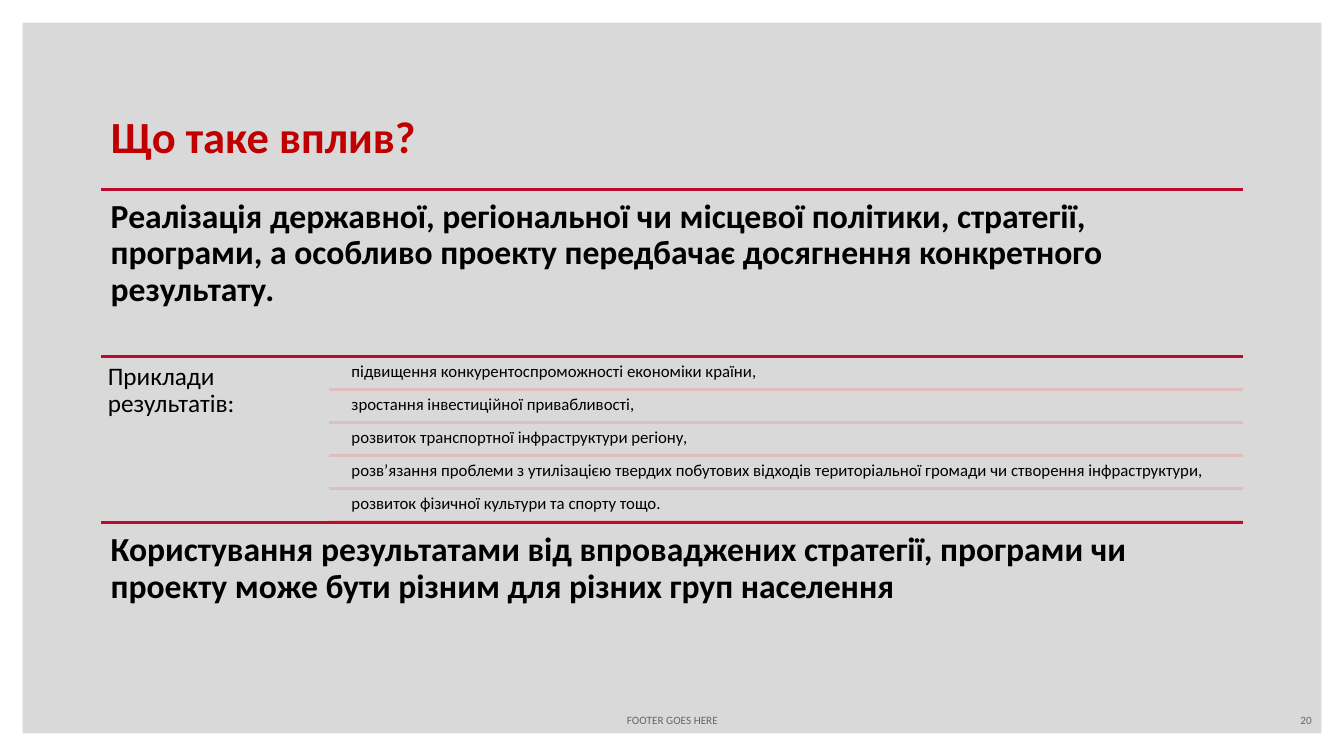
from dataclasses import dataclass

from lxml import etree
from pptx import Presentation
from pptx.dml.color import RGBColor
from pptx.enum.shapes import MSO_CONNECTOR, MSO_SHAPE
from pptx.enum.text import MSO_ANCHOR, MSO_AUTO_SIZE, PP_ALIGN
from pptx.oxml.ns import qn
from pptx.util import Inches, Pt

LEFT, CENTER, RIGHT = PP_ALIGN.LEFT, PP_ALIGN.CENTER, PP_ALIGN.RIGHT
TOP, MIDDLE, BOTTOM = MSO_ANCHOR.TOP, MSO_ANCHOR.MIDDLE, MSO_ANCHOR.BOTTOM

# Content
TITLE = "Що таке вплив?"
INTRO = ("Реалізація державної, регіональної чи місцевої політики, стратегії, "
         "програми, а особливо проекту передбачає досягнення конкретного результату.")
EXAMPLES_LABEL = "Приклади результатів:"
EXAMPLES = [
    "підвищення конкурентоспроможності економіки країни,",
    "зростання інвестиційної привабливості,",
    "розвиток транспортної інфраструктури регіону,",
    "розв’язання проблеми з утилізацією твердих побутових відходів "
    "територіальної громади чи створення інфраструктури,",
    "розвиток фізичної культури та спорту тощо.",
]
CONCLUSION = ("Користування результатами від впроваджених стратегії, програми чи "
              "проекту може бути різним для різних груп населення")
FOOTER = "FOOTER GOES HERE"
PAGE = "20"


@dataclass(frozen=True)
class Theme:
    font: str = "Calibri"
    background: str = "D9D9D9"
    frame: str = "FFFFFF"
    title: str = "C00000"
    text: str = "000000"
    muted: str = "6C6463"
    rule: str = "BA0C2F"
    soft_rule: str = "E0BDBE"
    title_size: float = 31.8
    statement_size: float = 24
    label_size: float = 18
    example_size: float = 12
    footer_size: float = 8
    rule_width: float = 2


THEME = Theme()

# Grid, in inches
SLIDE_W, SLIDE_H = 13.33, 7.5
MARGIN = 1
BODY_W = SLIDE_W - 2 * MARGIN
BODY_RIGHT = MARGIN + BODY_W
BODY_TOP, BODY_BOTTOM = 1.88, 6.84
TIER_H = (BODY_BOTTOM - BODY_TOP) / 3
intro_top, examples_top, conclusion_top = (BODY_TOP + i * TIER_H for i in range(3))
LABEL_W = BODY_W / 5
EXAMPLE_INDENT = 0.17
GAP_SHARE = 0.05  # gap between examples, as a share of an example's height
count = len(EXAMPLES)
EXAMPLE_H = TIER_H / (count + (count + 1) * GAP_SHARE)
EXAMPLE_GAP = EXAMPLE_H * GAP_SHARE
FOOTER_TOP, FOOTER_H = 7.03, 0.23

prs = Presentation()
prs.slide_width, prs.slide_height = Inches(SLIDE_W), Inches(SLIDE_H)
slide = prs.slides.add_slide(prs.slide_layouts[5])


def put_text(text, *, at, size, color=THEME.text, bold=False, align=LEFT,
             anchor=TOP, inset=(0.1, 0.05), spacing=None, after=0, box=None):
    left, top, width, height = map(Inches, at)
    if box is None:
        box = slide.shapes.add_textbox(left, top, width, height)
    box.left, box.top, box.width, box.height = left, top, width, height
    frame = box.text_frame
    frame.word_wrap = True
    frame.auto_size = MSO_AUTO_SIZE.NONE
    frame.vertical_anchor = anchor
    frame.margin_left = frame.margin_right = Inches(inset[0])
    frame.margin_top = frame.margin_bottom = Inches(inset[1])
    frame.text = text
    paragraph = frame.paragraphs[0]
    paragraph.alignment = align
    paragraph.space_after = Pt(after)
    if spacing:
        paragraph.line_spacing = spacing
    font = paragraph.runs[0].font
    font.name, font.size, font.bold = THEME.font, Pt(size), bold
    font.color.rgb = RGBColor.from_string(color)


def put_rule(left, y, color):
    rule = slide.shapes.add_connector(MSO_CONNECTOR.STRAIGHT, Inches(left), Inches(y),
                                      Inches(BODY_RIGHT), Inches(y))
    rule.line.color.rgb = RGBColor.from_string(color)
    rule.line.width = Pt(THEME.rule_width)
    etree.SubElement(rule._element.spPr, qn("a:effectLst"))


# Background and white frame
slide.background.fill.solid()
slide.background.fill.fore_color.rgb = RGBColor.from_string(THEME.background)
border = slide.shapes.add_shape(MSO_SHAPE.FRAME, 0, 0, prs.slide_width, prs.slide_height)
border.adjustments[0] = 0.03
border.shadow.inherit = False
border.fill.solid()
border.fill.fore_color.rgb = RGBColor.from_string(THEME.frame)
border.line.fill.background()

# Footer and page number
for text, left, width, align in [(FOOTER, 4.56, 4.22, CENTER), (PAGE, 10, 3.11, RIGHT)]:
    put_text(text, at=(left, FOOTER_TOP, width, FOOTER_H), size=THEME.footer_size,
             color=THEME.muted, align=align, anchor=MIDDLE, after=6)

# Title
put_text(TITLE, at=(MARGIN, 1.02, BODY_W, 0.64), size=THEME.title_size,
         color=THEME.title, bold=True, anchor=BOTTOM, box=slide.shapes.title)

# Opening and closing statements
for text, top in [(INTRO, intro_top), (CONCLUSION, conclusion_top)]:
    put_text(text, at=(MARGIN, top, BODY_W, TIER_H), size=THEME.statement_size,
             bold=True, inset=(0.1, 0.1), spacing=0.9)

# Examples of results
put_text(EXAMPLES_LABEL, at=(MARGIN, examples_top, LABEL_W, TIER_H),
         size=THEME.label_size, inset=(0.07, 0.07), spacing=0.9)
examples_left = MARGIN + LABEL_W
for i, example in enumerate(EXAMPLES):
    top = examples_top + EXAMPLE_GAP + i * (EXAMPLE_H + EXAMPLE_GAP)
    put_text(example, at=(examples_left + EXAMPLE_INDENT, top,
                          BODY_W - LABEL_W - EXAMPLE_INDENT, EXAMPLE_H),
             size=THEME.example_size, inset=(0.05, 0.05), spacing=0.9)
    put_rule(examples_left, top + EXAMPLE_H, THEME.soft_rule)

# Rules above each tier
for top in (intro_top, examples_top, conclusion_top):
    put_rule(MARGIN, top, THEME.rule)

prs.save("out.pptx")
